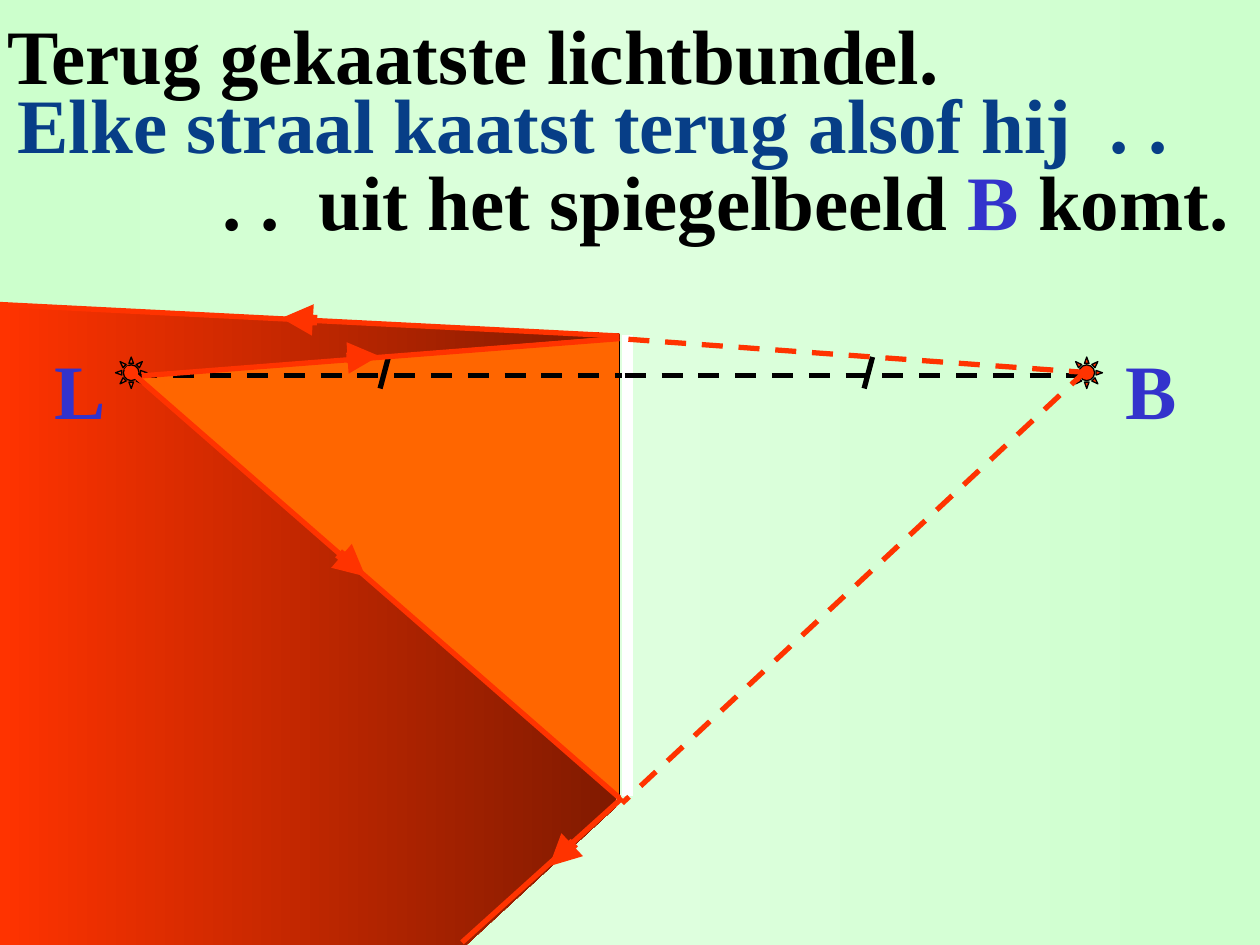
from copy import deepcopy

from pptx import Presentation
from pptx.dml.color import RGBColor
from pptx.enum.dml import MSO_LINE
from pptx.enum.shapes import MSO_CONNECTOR, MSO_SHAPE
from pptx.enum.text import MSO_ANCHOR
from pptx.oxml.ns import qn
from pptx.util import Inches, Pt
from lxml.etree import SubElement

COLORS = {
    "edge": "CCFFCC", "middle": "DEFFDE", "ray": "FF3300", "shade": "801A00",
    "beam": "FF6600", "ink": "000000", "mirror": "FFFFFF",
    "title": "073E87", "label": "3333CC",
}


class RayDiagram:
    font = "Times New Roman"
    size = Pt(44)
    columns, rows = 120, 90

    def __init__(self, deck):
        self.slide = deck.slides.add_slide(deck.slide_layouts[6])
        self.shapes = self.slide.shapes
        self.cell_width = deck.slide_width / self.columns
        self.cell_height = deck.slide_height / self.rows

    def place(self, column, row):
        return round(column * self.cell_width), round(row * self.cell_height)

    def color(self, name):
        return RGBColor.from_string(COLORS[name])

    def gradient(self, fill, element, *names):
        fill.gradient()
        fill.gradient_angle = 0
        stops = element.find(".//" + qn("a:gsLst"))
        for _ in names[2:]:
            stops.append(deepcopy(stops[-1]))
        for index, (stop, name) in enumerate(zip(fill.gradient_stops, names)):
            stop.position = index / (len(names) - 1)
            stop.color.rgb = self.color(name)

    def background(self, *names):
        self.gradient(self.slide.background.fill, self.slide.element, *names)

    def area(self, corners, *names):
        start, *others = [self.place(*corner) for corner in corners]
        builder = self.shapes.build_freeform(*start)
        builder.add_line_segments(others, close=True)
        region = builder.convert_to_shape()
        region.shadow.inherit = False
        region.line.fill.background()
        if len(names) > 1:
            self.gradient(region.fill, region.element, *names)
        else:
            region.fill.solid()
            region.fill.fore_color.rgb = self.color(names[0])

    def line(self, start, end, name="ray", width=3, dashed=False, arrow=False):
        stroke = self.shapes.add_connector(
            MSO_CONNECTOR.STRAIGHT, *self.place(*start), *self.place(*end))
        stroke.line.color.rgb = self.color(name)
        stroke.line.width = Pt(width)
        if dashed:
            stroke.line.dash_style = MSO_LINE.DASH
        if arrow:
            SubElement(stroke.line._get_or_add_ln(), qn("a:tailEnd"), type="triangle")
        SubElement(stroke.element.spPr, qn("a:effectLst"))

    def arrow(self, start, end):
        self.line(start, end, width=6, arrow=True)

    def sun(self, column, row, side=3):
        light = self.shapes.add_shape(
            MSO_SHAPE.SUN, *self.place(column, row), *self.place(side, side))
        light.adjustments[0] = 0.25
        light.shadow.inherit = False
        light.fill.solid()
        light.fill.fore_color.rgb = self.color("ray")
        light.line.color.rgb = self.color("ink")
        light.line.width = Pt(0.75)

    def text(self, column, row, width, height, *runs, anchor=MSO_ANCHOR.MIDDLE):
        frame = self.shapes.add_textbox(
            *self.place(column, row), *self.place(width, height)).text_frame
        frame.word_wrap = True
        frame.vertical_anchor = anchor
        paragraph = frame.paragraphs[0]
        paragraph.font.name = self.font
        paragraph.font.size = self.size
        paragraph.font.bold = True
        for words, name in runs:
            run = paragraph.add_run()
            run.text = words
            run.font.color.rgb = self.color(name)


def main():
    deck = Presentation()
    deck.slide_width, deck.slide_height = Inches(10), Inches(7.5)
    diagram = RayDiagram(deck)
    diagram.background("edge", "middle", "edge")

    mirror_top, mirror_foot = (59, 32), (59, 76)
    axis = 35.8
    diagram.area([(59, 31.8), (58.6, 76.9), (44.4, 90), (0, 90), (0, 29.2)],
                 "ray", "shade")
    diagram.area([mirror_top, (12.6, axis), mirror_foot], "beam")
    diagram.line((59, 31.8), (59, 75.8), "ink", 0.75)
    diagram.line((59.75, 31.9), (59.75, 75.8), "mirror", 6)

    diagram.text(0.5, 7.2, 113, 9, ("Elke straal kaatst terug alsof hij  . .", "title"))
    diagram.text(20, 15, 99, 8, (". .  uit het spiegelbeeld ", "ink"),
                 ("B", "label"), (" komt.", "ink"))

    diagram.line(mirror_top, (0, 29))
    diagram.arrow((30.2, 30.5), (26.8, 30.3))
    for start, end, tick in ((13, 59.25, 36.6), (59.5, 104, 82.7)):
        diagram.line((start, axis), (end, axis), "ink", dashed=True)
        diagram.line((tick + 0.4, 34), (tick - 0.4, 37), "ink")

    for letter, letter_column, sun_column in (("B", 106, 102), ("L", 4, 11)):
        diagram.text(letter_column, 32, 8, 10, (letter, "label"), anchor=MSO_ANCHOR.TOP)
        diagram.sun(sun_column, 34)

    diagram.line((103.8, 35.5), (59, 32.25), dashed=True)
    diagram.line((103.5, 35.25), (59.25, 76.5), dashed=True)
    diagram.line((13.5, axis), (59, 32.25))
    diagram.arrow((33, 34.1), (36.1, 33.9))
    diagram.line((12, 35), mirror_foot)
    diagram.arrow((32.25, 52.7), (34.8, 54.9))
    diagram.line((59.25, 76), (44, 89.75))
    diagram.arrow((54.7, 80.25), (52.3, 82.5))
    diagram.text(-0.5, 0.6, 113, 9, ("Terug gekaatste lichtbundel.", "ink"))
    deck.save("out.pptx")


if __name__ == "__main__":
    main()
